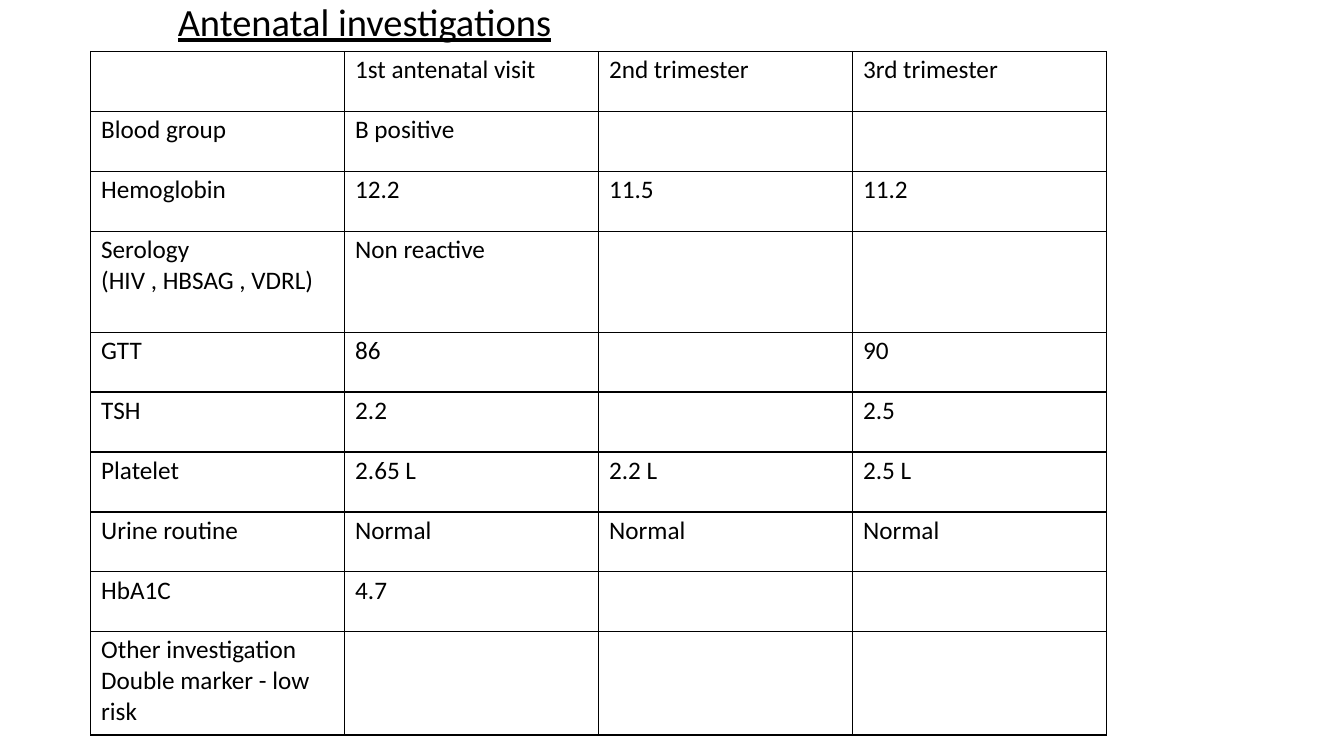
from lxml import etree
from pptx import Presentation
from pptx.dml.color import RGBColor
from pptx.enum.text import MSO_ANCHOR, MSO_AUTO_SIZE, PP_ALIGN
from pptx.oxml import parse_xml
from pptx.util import Cm, Pt

BLACK = RGBColor(0x00, 0x00, 0x00)
NS = "http://schemas.openxmlformats.org/drawingml/2006/main"
ROWS = [
    ["", "1st antenatal visit", "2nd trimester", "3rd trimester"],
    ["Blood group", "B positive", "", ""],
    ["Hemoglobin", "12.2", "11.5", "11.2"],
    ["Serology\n(HIV , HBSAG , VDRL)", "Non reactive", "", ""],
    ["GTT", "86", "", "90"],
    ["TSH", "2.2", "", "2.5"],
    ["Platelet", "2.65 L", "2.2 L", "2.5 L"],
    ["Urine routine", "Normal", "Normal", "Normal"],
    ["HbA1C", "4.7", "", ""],
    ["Other investigation Double marker - low risk", "", "", ""],
]
HEIGHTS = {3: 2.54, 9: 2.6}


def set_font(font, size, underline=False):
    values = {"name": "Calibri", "size": Pt(size), "underline": underline, "bold": False}
    for key, value in values.items():
        setattr(font, key, value)
    font.color.rgb = BLACK


def add_borders(cell):
    for side in ("lnL", "lnR", "lnT", "lnB"):
        cell._tc.get_or_add_tcPr().append(parse_xml(
            f'<a:{side} xmlns:a="{NS}" w="12700"><a:solidFill>'
            f'<a:srgbClr val="{BLACK}"/></a:solidFill></a:{side}>'))


prs = Presentation()
prs.slide_width, prs.slide_height = Cm(33.87), Cm(19.05)
s = prs.slides.add_slide(prs.slide_layouts[5])

title = s.shapes.title
box = {"left": Cm(4.45), "top": Cm(-0.1), "width": Cm(9.65), "height": Cm(2.31)}
for key, value in box.items():
    setattr(title, key, value)
tf = title.text_frame
frame = {"margin_left": Cm(0.03), "margin_top": Cm(0.05), "margin_right": 0,
         "margin_bottom": 0, "word_wrap": True, "auto_size": MSO_AUTO_SIZE.NONE,
         "vertical_anchor": MSO_ANCHOR.TOP}
for key, value in frame.items():
    setattr(tf, key, value)
p = tf.paragraphs[0]
p.alignment = PP_ALIGN.LEFT
p.space_before = Pt(1.3)
r = p.add_run()
r.text = "Antenatal investigations"
set_font(r.font, 27.5, underline=True)

heights = [HEIGHTS.get(i, 1.51) for i in range(len(ROWS))]
table = s.shapes.add_table(len(ROWS), len(ROWS[0]), Cm(2.29), Cm(1.3),
                           Cm(4 * 6.4), Cm(sum(heights))).table
table.first_row = False
table.horz_banding = False
for column in table.columns:
    column.width = Cm(6.4)
for row, height, texts in zip(table.rows, heights, ROWS):
    row.height = Cm(height)
    for cell, text in zip(row.cells, texts):
        margins = {"margin_left": Cm(0.26), "margin_top": Cm(0.08),
                   "margin_right": 0, "margin_bottom": 0}
        for key, value in margins.items():
            setattr(cell, key, value)
        add_borders(cell)
        cell.fill.background()
        cell.text = text
        cell.text_frame.paragraphs[0].space_before = Pt(2.4)
        for p in cell.text_frame.paragraphs:
            set_font(p.font, 18)
            for r in p.runs:
                set_font(r.font, 18)

prs.save("out.pptx")
